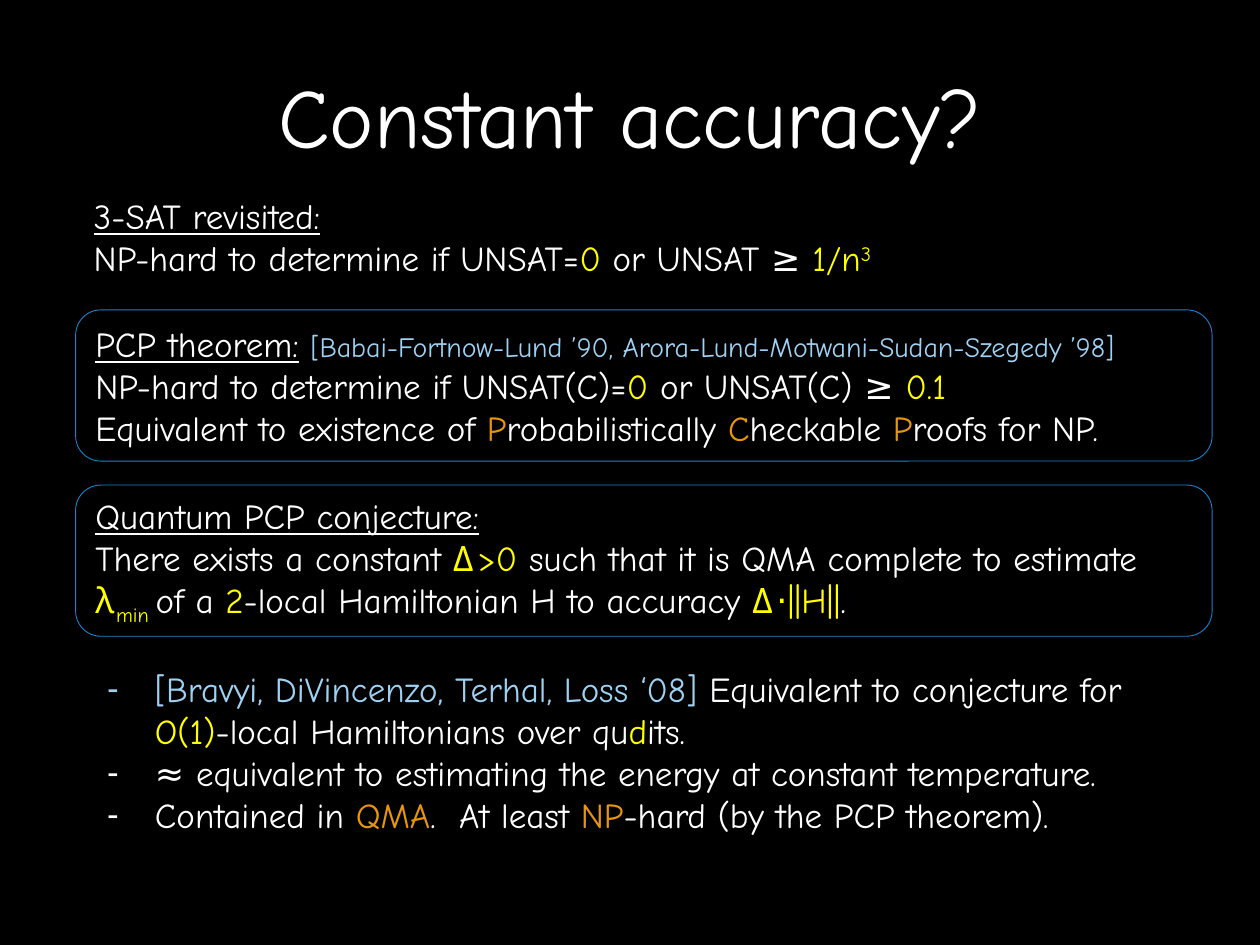
import pptx
import pptx.dml.color
import pptx.enum.shapes
import pptx.enum.text
import pptx.oxml.ns
import pptx.util
from lxml import etree

Inches = pptx.util.Inches
Pt = pptx.util.Pt
ALIGN = pptx.enum.text.PP_ALIGN
ANCHOR = pptx.enum.text.MSO_ANCHOR

FONT = "Comic Neue"
WHITE, YELLOW, ORANGE, PALE_BLUE = "FFFFFF", "FFFF00", "E8950E", "9ED0F1"
OUTLINE = "1884CD"

HEADING = {"underline": True}
VALUE = {"color": YELLOW}
TERM = {"color": ORANGE}
CITATION = {"color": PALE_BLUE}

# Each paragraph is a list of plain strings or (text, format) pairs.
SAT_TEXT = [
    [("3-SAT revisited:\n", HEADING), "NP-hard to determine if UNSAT=", ("0", VALUE),
     " or UNSAT ≥ ", ("1/n", VALUE), ("3", {**VALUE, "baseline": 30})],
]
PCP_TEXT = [
    [("PCP theorem:", HEADING), " ",
     ("[Babai-Fortnow-Lund ’90, Arora-Lund-Motwani-Sudan-Szegedy ’98]",
      {**CITATION, "size": 16})],
    ["NP-hard to determine if UNSAT(C)=", ("0", VALUE), " or UNSAT(C) ≥ ",
     ("0.1\n", VALUE), "Equivalent to existence of ", ("P", TERM), "robabilistically ",
     ("C", TERM), "heckable ", ("P", TERM), "roofs for NP."],
]
QUANTUM_TEXT = [
    [("Quantum PCP conjecture:", HEADING)],
    ["There exists a constant ", ("Δ>0", VALUE),
     " such that it is QMA complete to estimate ", ("λ", VALUE),
     ("min ", {**VALUE, "baseline": -25}), "of a ", ("2", VALUE),
     "-local Hamiltonian H to accuracy ", ("Δ⋅||H||", VALUE), "."],
]
REMARKS = [
    [("[Bravyi, DiVincenzo, Terhal, Loss ‘08]", CITATION),
     " Equivalent to conjecture for\n", ("O(1)", VALUE),
     "-local Hamiltonians over qu", ("d", VALUE), "its."],
    ["≈ equivalent to estimating the energy at constant temperature."],
    ["Contained in ", ("QMA", TERM), ".  At least ", ("NP", TERM),
     "-hard (by the PCP theorem)."],
]


def rgb(value):
    return pptx.dml.color.RGBColor.from_string(value)


def place(shape, left, top, width, height):
    bounds = {"left": left, "top": top, "width": width, "height": height}
    for name, value in bounds.items():
        setattr(shape, name, Inches(value))


def add_run(paragraph, text, size=20, color=WHITE, underline=False, baseline=0):
    """Add a run; a trailing newline in the text becomes a line break."""
    run = paragraph.add_run()
    run.text = text.rstrip("\n")
    values = {"name": FONT, "size": Pt(size), "underline": underline}
    for name, value in values.items():
        setattr(run.font, name, value)
    run.font.color.rgb = rgb(color)
    if baseline:
        run.font._element.set("baseline", str(baseline * 1000))
    if text.endswith("\n"):
        paragraph.add_line_break()


def add_dash(paragraph):
    properties = paragraph._p.get_or_add_pPr()
    indent = Inches(0.38)
    properties.set("marL", str(indent))
    properties.set("indent", str(-indent))
    bullet = etree.SubElement(properties, pptx.oxml.ns.qn("a:buChar"))
    bullet.set("char", "-")


def write_text(shape, paragraphs, align=ALIGN.LEFT, anchor=ANCHOR.MIDDLE, dashed=False):
    frame = shape.text_frame
    settings = {"word_wrap": True, "vertical_anchor": anchor,
                "auto_size": pptx.enum.text.MSO_AUTO_SIZE.NONE}
    for name, value in settings.items():
        setattr(frame, name, value)
    for index, pieces in enumerate(paragraphs):
        paragraph = frame.add_paragraph() if index else frame.paragraphs[0]
        if dashed:
            add_dash(paragraph)
        paragraph.alignment = align
        paragraph.space_before = Pt(0)
        for piece in pieces:
            text, style = (piece, {}) if isinstance(piece, str) else piece
            add_run(paragraph, text, **style)


def add_statement(slide, bounds, paragraphs, outlined=True):
    shape = slide.shapes.add_shape(
        pptx.enum.shapes.MSO_SHAPE.ROUNDED_RECTANGLE, *map(Inches, bounds))
    shape.shadow.inherit = False
    shape.fill.background()
    if outlined:
        shape.line.color.rgb = rgb(OUTLINE)
        shape.line.width = Pt(0.5)
    else:
        shape.line.fill.background()
    write_text(shape, paragraphs)


def main():
    presentation = pptx.Presentation()
    presentation.slide_width = Inches(10)
    presentation.slide_height = Inches(7.5)
    slide = presentation.slides.add_slide(presentation.slide_layouts[1])
    slide.background.fill.solid()
    slide.background.fill.fore_color.rgb = rgb("000000")

    title, body = slide.placeholders
    place(title, 0.75, 0.13, 8.5, 1.56)
    write_text(title, [[("Constant accuracy?", {"size": 48})]], align=ALIGN.CENTER)

    add_statement(slide, (0.6, 1.41, 8.5, 0.94), SAT_TEXT, outlined=False)
    add_statement(slide, (0.6, 2.46, 9.02, 1.2), PCP_TEXT)
    add_statement(slide, (0.6, 3.85, 9.02, 1.2), QUANTUM_TEXT)

    place(body, 0.75, 5.25, 8.86, 1.78)
    write_text(body, REMARKS, anchor=ANCHOR.TOP, dashed=True)
    presentation.save("out.pptx")


if __name__ == "__main__":
    main()
